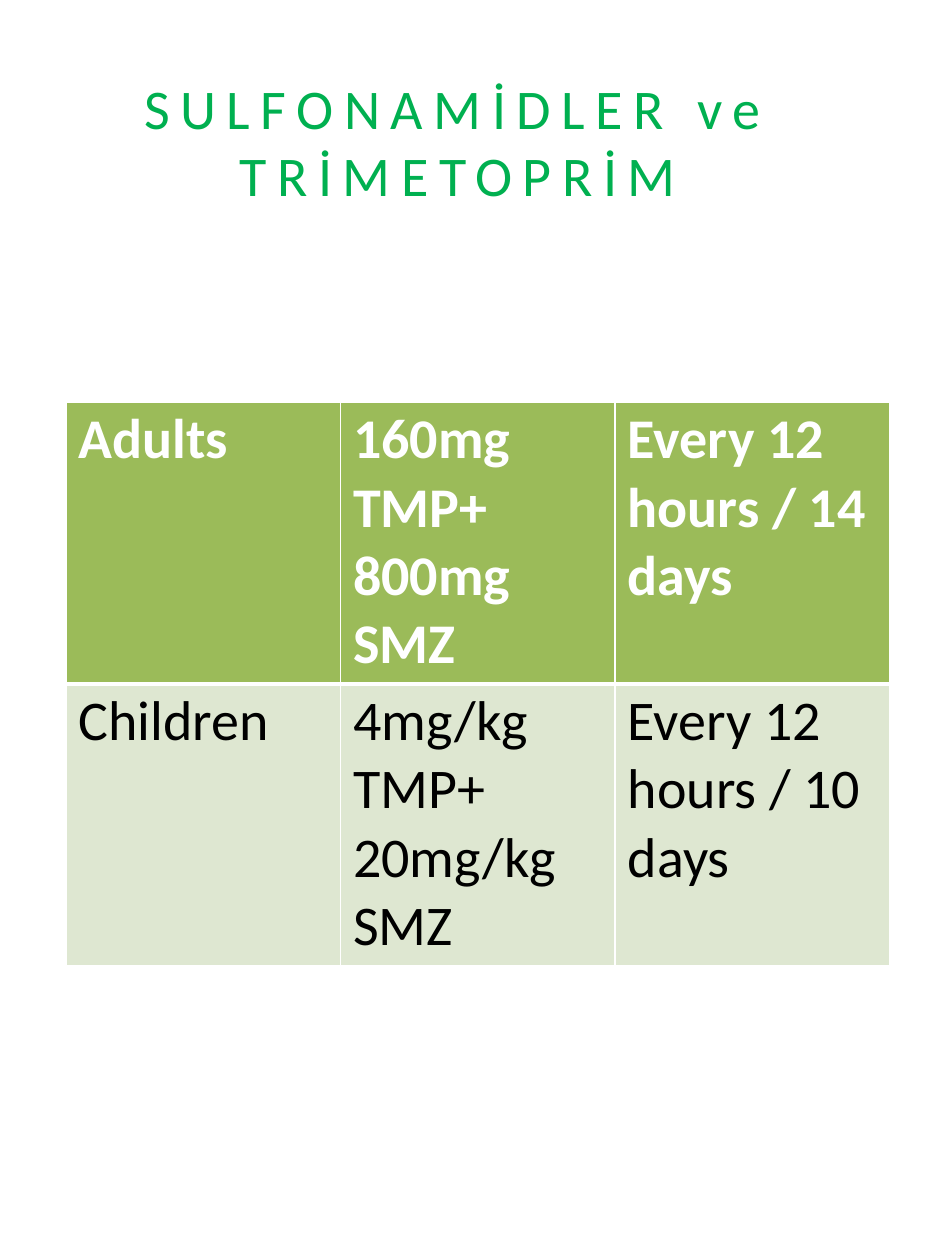
from pptx import Presentation
from pptx.dml.color import RGBColor
from pptx.enum.text import PP_ALIGN
from pptx.oxml import parse_xml
from pptx.oxml.ns import nsdecls
from pptx.util import Pt

WHITE = "FFFFFF"
COLUMN_WIDTH = 157
ROW_HEIGHT = 161
DOSES = [
    ["Adults", "160mg TMP+\n800mg\nSMZ", "Every 12 hours / 14 days"],
    ["Children", "4mg/kg TMP+\n20mg/kg SMZ", "Every 12 hours / 10 days"],
]
HEADER = {"fill": "9BBB59", "color": WHITE, "bold": True}
BODY = {"fill": "DEE7D1", "color": "000000", "bold": False}


def rgb(value):
    return RGBColor.from_string(value)


def style_font(font, color, bold):
    for name, value in {"name": "Calibri", "size": Pt(32), "bold": bold}.items():
        setattr(font, name, value)
    font.color.rgb = rgb(color)


def add_title(slide, title):
    box = slide.shapes.add_textbox(Pt(54.7), Pt(38.2), Pt(414), Pt(85))
    box.text_frame.word_wrap = True
    paragraph = box.text_frame.paragraphs[0]
    paragraph.alignment = PP_ALIGN.CENTER
    run = paragraph.add_run()
    run.text = title
    style_font(run.font, "00B050", False)
    run.font._element.set("spc", "600")


def add_borders(cell, widths):
    """Put white lines on the cell's sides; they must precede its fill."""
    properties = cell._tc.get_or_add_tcPr()
    for position, (side, width) in enumerate(widths.items()):
        properties.insert(position, parse_xml(
            f'<a:ln{side} {nsdecls("a")} w="{Pt(width)}"><a:solidFill>'
            f'<a:srgbClr val="{WHITE}"/></a:solidFill></a:ln{side}>'))


def fill_cell(cell, text, look, borders):
    cell.text = text
    cell.margin_top = cell.margin_bottom = Pt(1.8)
    cell.fill.solid()
    cell.fill.fore_color.rgb = rgb(look["fill"])
    add_borders(cell, borders)
    for paragraph in cell.text_frame.paragraphs:
        for run in paragraph.runs:
            style_font(run.font, look["color"], look["bold"])


def add_dose_table(slide):
    rows, columns = len(DOSES), len(DOSES[0])
    table = slide.shapes.add_table(
        rows, columns, Pt(37.6), Pt(229.8),
        Pt(columns * COLUMN_WIDTH), Pt(rows * ROW_HEIGHT)).table
    for column in table.columns:
        column.width = Pt(COLUMN_WIDTH)
    for row_index, doses in enumerate(DOSES):
        table.rows[row_index].height = Pt(ROW_HEIGHT)
        is_header = row_index == 0
        look = HEADER if is_header else BODY
        borders = {"L": 1, "R": 1, "T": 1 if is_header else 3, "B": 3 if is_header else 1}
        for column_index, text in enumerate(doses):
            fill_cell(table.cell(row_index, column_index), text, look, borders)


def main():
    presentation = Presentation()
    presentation.slide_width, presentation.slide_height = Pt(540), Pt(720)
    slide = presentation.slides.add_slide(presentation.slide_layouts[6])
    add_title(slide, "SULFONAMİDLER ve TRİMETOPRİM")
    add_dose_table(slide)
    presentation.save("out.pptx")


if __name__ == "__main__":
    main()
